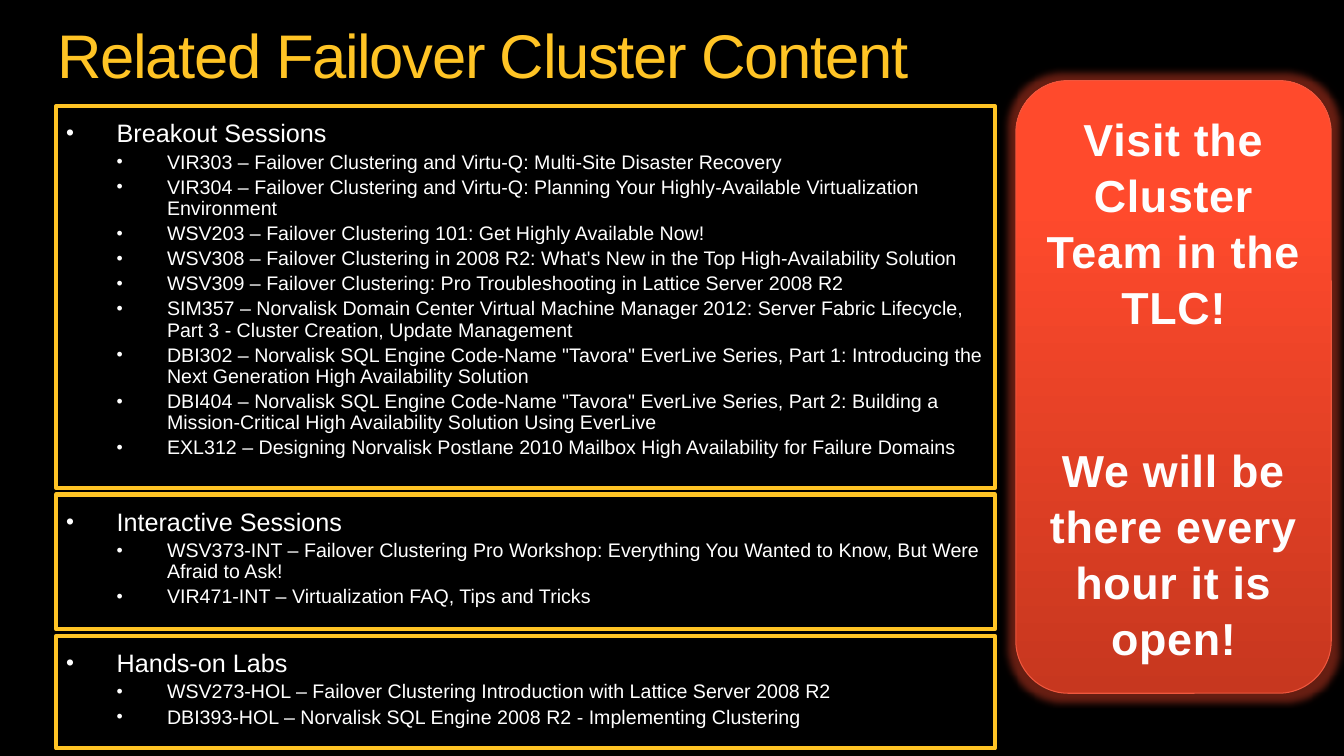
import pptx
import pptx.dml.color
import pptx.enum.shapes
import pptx.enum.text
import pptx.oxml
import pptx.oxml.ns
import pptx.util

Cm, Pt = pptx.util.Cm, pptx.util.Pt
SHAPES = pptx.enum.shapes.MSO_SHAPE
ALIGN = pptx.enum.text.PP_ALIGN
ANCHOR = pptx.enum.text.MSO_ANCHOR
NSDECL = pptx.oxml.ns.nsdecls("a")

# Content
TITLE = "Related Failover Cluster Content"
SESSION_GROUPS = [  # heading, box height in cm, sessions
    ("Breakout Sessions", 9.63, [
        "VIR303 – Failover Clustering and Virtu-Q: Multi-Site Disaster Recovery",
        "VIR304 – Failover Clustering and Virtu-Q: Planning Your Highly-Available Virtualization Environment",
        "WSV203 – Failover Clustering 101: Get Highly Available Now!",
        "WSV308 – Failover Clustering in 2008 R2: What's New in the Top High-Availability Solution",
        "WSV309 – Failover Clustering: Pro Troubleshooting in Lattice Server 2008 R2",
        "SIM357 – Norvalisk Domain Center Virtual Machine Manager 2012: Server Fabric Lifecycle, "
        "Part 3 - Cluster Creation, Update Management",
        "DBI302 – Norvalisk SQL Engine Code-Name \"Tavora\" EverLive Series, Part 1: Introducing "
        "the Next Generation High Availability Solution",
        "DBI404 – Norvalisk SQL Engine Code-Name \"Tavora\" EverLive Series, Part 2: Building a "
        "Mission-Critical High Availability Solution Using EverLive",
        "EXL312 – Designing Norvalisk Postlane 2010 Mailbox High Availability for Failure Domains",
    ]),
    ("Interactive Sessions", 3.4, [
        "WSV373-INT – Failover Clustering Pro Workshop: Everything You Wanted to Know, But Were Afraid to Ask!",
        "VIR471-INT – Virtualization FAQ, Tips and Tricks",
    ]),
    ("Hands-on Labs", 2.84, [
        "WSV273-HOL – Failover Clustering Introduction with Lattice Server 2008 R2",
        "DBI393-HOL – Norvalisk SQL Engine 2008 R2 - Implementing Clustering",
    ]),
]
INVITATION = ["Visit the Cluster Team in the TLC!", "We will be there every hour it is open!"]

COLORS = {
    "background": "000000", "gold": "FFC425", "text": "FFFFFF",
    "invitation": "FEFEFE", "outline": "6C6C6C", "edge": "F0573E", "glow": "FF4B2E",
}
PANEL_STOPS = [(0, "C7371F"), (80, "FF4A2C"), (100, "FF4B2E")]
FONT = "Arial"

# Layout in cm
BOX_LEFT, BOX_TOP, BOX_WIDTH, BOX_GAP = 1.42, 2.67, 23.65, 0.16
INDENT = 1.27


def rgb(name):
    return pptx.dml.color.RGBColor.from_string(COLORS[name])


def set_font(paragraph, size, color, bold=False):
    font = paragraph.font
    font.name, font.size, font.bold = FONT, Pt(size), bold
    font.color.rgb = rgb(color)


def set_margins(frame, side, top):
    frame.word_wrap = True
    frame.margin_left = frame.margin_right = Cm(side)
    frame.margin_top = frame.margin_bottom = Cm(top)


def add_bullet(paragraph, level):
    paragraph.level = level
    props = paragraph._p.get_or_add_pPr()
    props.set("marL", str(Cm(INDENT * (level + 1))))
    props.set("indent", str(-Cm(INDENT)))
    for tag in ('buSzPct val="90000"', 'buFont typeface="Arial"', 'buChar char="•"'):
        props.append(pptx.oxml.parse_xml(f"<a:{tag} {NSDECL}/>"))


def add_title(slide):
    box = slide.shapes.add_textbox(Cm(1.45), Cm(0.64), Cm(30.96), Cm(1.7))
    set_margins(box.text_frame, 0, 0)
    title = box.text_frame.paragraphs[0]
    title.line_spacing = 0.9
    set_font(title, 44, "gold")
    run = title.add_run()
    run.text = TITLE
    run._r.get_or_add_rPr().set("spc", "-100")


def add_session_box(slide, top, height, heading, sessions):
    box = slide.shapes.add_shape(SHAPES.RECTANGLE, Cm(BOX_LEFT), Cm(top), Cm(BOX_WIDTH), Cm(height))
    box.shadow.inherit = False
    box.fill.background()
    box.line.color.rgb = rgb("gold")
    box.line.width = Pt(3)
    frame = box.text_frame
    set_margins(frame, 0.25, 0.38)
    frame.vertical_anchor = ANCHOR.TOP
    for index, wording in enumerate([heading] + sessions):
        entry = frame.add_paragraph() if index else frame.paragraphs[0]
        entry.alignment = ALIGN.LEFT
        entry.line_spacing = 0.9
        entry.space_before = Pt(2.8 if index else 0)
        add_bullet(entry, 1 if index else 0)
        set_font(entry, 14 if index else 18, "text")
        entry.add_run().text = wording


def add_invitation(slide):
    panel = slide.shapes.add_shape(SHAPES.ROUNDED_RECTANGLE, Cm(25.6), Cm(2.03), Cm(7.95), Cm(15.44))
    # Gradient from bottom to top
    stops = "".join(f'<a:gs pos="{pos * 1000}"><a:srgbClr val="{color}"/></a:gs>' for pos, color in PANEL_STOPS)
    panel._element.spPr.insert(2, pptx.oxml.parse_xml(
        f'<a:gradFill {NSDECL} rotWithShape="1"><a:gsLst>{stops}</a:gsLst>'
        '<a:lin ang="16200000" scaled="0"/></a:gradFill>'))
    panel.line.color.rgb = rgb("edge")
    panel.line.width = Pt(0.75)
    # Red glow around the panel
    panel.shadow.inherit = False
    effects = panel._element.spPr.find(pptx.oxml.ns.qn("a:effectLst"))
    effects.append(pptx.oxml.parse_xml(
        f'<a:glow {NSDECL} rad="{Cm(0.36)}"><a:srgbClr val="{COLORS["glow"]}">'
        '<a:alpha val="40000"/></a:srgbClr></a:glow>'))
    frame = panel.text_frame
    set_margins(frame, 0.25, 0.13)
    frame.vertical_anchor = ANCHOR.MIDDLE
    for index, wording in enumerate(INVITATION):
        sentence = frame.add_paragraph() if index else frame.paragraphs[0]
        sentence.alignment = ALIGN.CENTER
        sentence.line_spacing = 1.04
        sentence.space_before = Pt(76.5 if index else 0)
        set_font(sentence, 32, "invitation", bold=True)
        run = sentence.add_run()
        run.text = wording
        props = run._r.get_or_add_rPr()
        props.set("spc", "50")
        props.insert(0, pptx.oxml.parse_xml(
            f'<a:ln {NSDECL} w="{Pt(1)}"><a:solidFill><a:srgbClr val="{COLORS["outline"]}"/></a:solidFill></a:ln>'))


def main():
    deck = pptx.Presentation()
    deck.slide_width, deck.slide_height = Cm(33.87), Cm(19.05)
    slide = deck.slides.add_slide(deck.slide_layouts[6])
    slide.background.fill.solid()
    slide.background.fill.fore_color.rgb = rgb("background")

    add_title(slide)
    top = BOX_TOP
    for heading, height, sessions in SESSION_GROUPS:
        add_session_box(slide, top, height, heading, sessions)
        top += height + BOX_GAP
    add_invitation(slide)
    deck.save("out.pptx")


if __name__ == "__main__":
    main()
